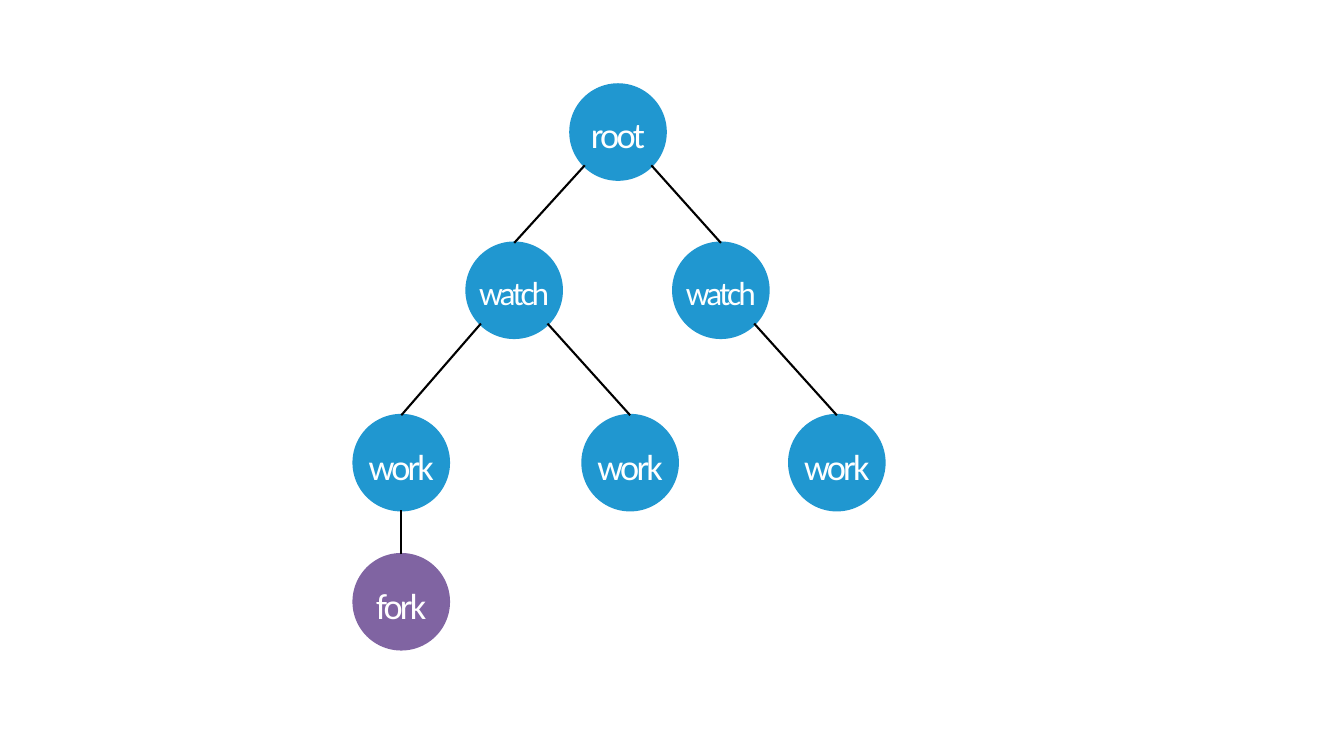
"""Draw a process tree of round nodes joined by lines."""
from dataclasses import dataclass

from lxml.etree import SubElement
from pptx import Presentation
from pptx.dml.color import RGBColor as Rgb
from pptx.enum.shapes import MSO_CONNECTOR as Conn, MSO_SHAPE as Kind
from pptx.enum.text import MSO_ANCHOR as Anchor, PP_ALIGN as Align
from pptx.oxml.ns import qn
from pptx.shapes.autoshape import Shape
from pptx.slide import Slide
from pptx.util import Emu, Pt

SCALE = 9144
SIZE = 94
HUES = {"blue": "2097D0", "plum": "8064A2", "white": "FFFFFF", "black": "000000"}


@dataclass(frozen=True)
class Node:
    word: str
    left: int
    top: int
    drop: int = 24
    size: float = 25.9
    hue: str = "blue"


@dataclass(frozen=True)
class Link:
    child: str
    parent: str


NODES = {
    "root": Node("root", 566, 84, drop=22),
    "watch a": Node("watch", 463, 241, size=23.8),
    "watch b": Node("watch", 668, 241, size=23.8),
    "work a": Node("work", 351, 412),
    "work b": Node("work", 578, 412),
    "work c": Node("work", 783, 412),
    "fork": Node("fork", 351, 550, hue="plum"),
}
LINKS = [
    Link("watch a", "root"),
    Link("watch b", "root"),
    Link("work a", "watch a"),
    Link("work b", "watch a"),
    Link("work c", "watch b"),
    Link("fork", "work a"),
]


def px(count: int) -> Emu:
    return Emu(count * SCALE)


def color(name: str) -> Rgb:
    return Rgb.from_string(HUES[name])


def add_text(slide: Slide, text: str, left: int, top: int, *, width: int = SIZE,
             height: int = 47, size: float = 25.9, hue: str = "white",
             font: str = "Calibri", space: int = -2) -> None:
    box = slide.shapes.add_textbox(px(left), px(top), px(width), px(height))
    frame = box.text_frame
    frame.word_wrap = True
    frame.vertical_anchor = Anchor.TOP
    frame.margin_left = frame.margin_right = 0
    para = frame.paragraphs[0]
    para.alignment = Align.CENTER
    run = para.add_run()
    run.text = text
    run.font.name = font
    run.font.size = Pt(size)
    run.font.color.rgb = color(hue)
    run._r.get_or_add_rPr().set("spc", str(space * 100))


def add_node(slide: Slide, node: Node) -> Shape:
    disc = slide.shapes.add_shape(Kind.FLOWCHART_CONNECTOR, px(node.left),
                                  px(node.top), px(SIZE), px(SIZE))
    disc.shadow.inherit = False
    disc.fill.solid()
    disc.fill.fore_color.rgb = color(node.hue)
    disc.line.color.rgb = color(node.hue)
    disc.line.width = Pt(2)
    add_text(slide, node.word, node.left, node.top + node.drop, size=node.size)
    return disc


def add_link(slide: Slide, link: Link, discs: dict[str, Shape]) -> None:
    child, parent = NODES[link.child], NODES[link.parent]
    side = (child.left > parent.left) - (child.left < parent.left)
    mid = SIZE // 2
    line = slide.shapes.add_connector(
        Conn.STRAIGHT, px(child.left + mid), px(child.top),
        px(parent.left + mid + side * 33), px(parent.top + (80 if side else SIZE)))
    line.begin_connect(discs[link.child], 0)
    line.line.color.rgb = color("black")
    line.line.width = Pt(1.5)
    SubElement(line._element.spPr, qn("a:effectLst"))


def main() -> None:
    deck = Presentation()
    deck.slide_width, deck.slide_height = px(1333), px(750)
    slide = deck.slides.add_slide(deck.slide_layouts[6])
    discs = {name: add_node(slide, node) for name, node in NODES.items()}
    for link in LINKS:
        add_link(slide, link, discs)
    deck.save("out.pptx")


if __name__ == "__main__":
    main()
